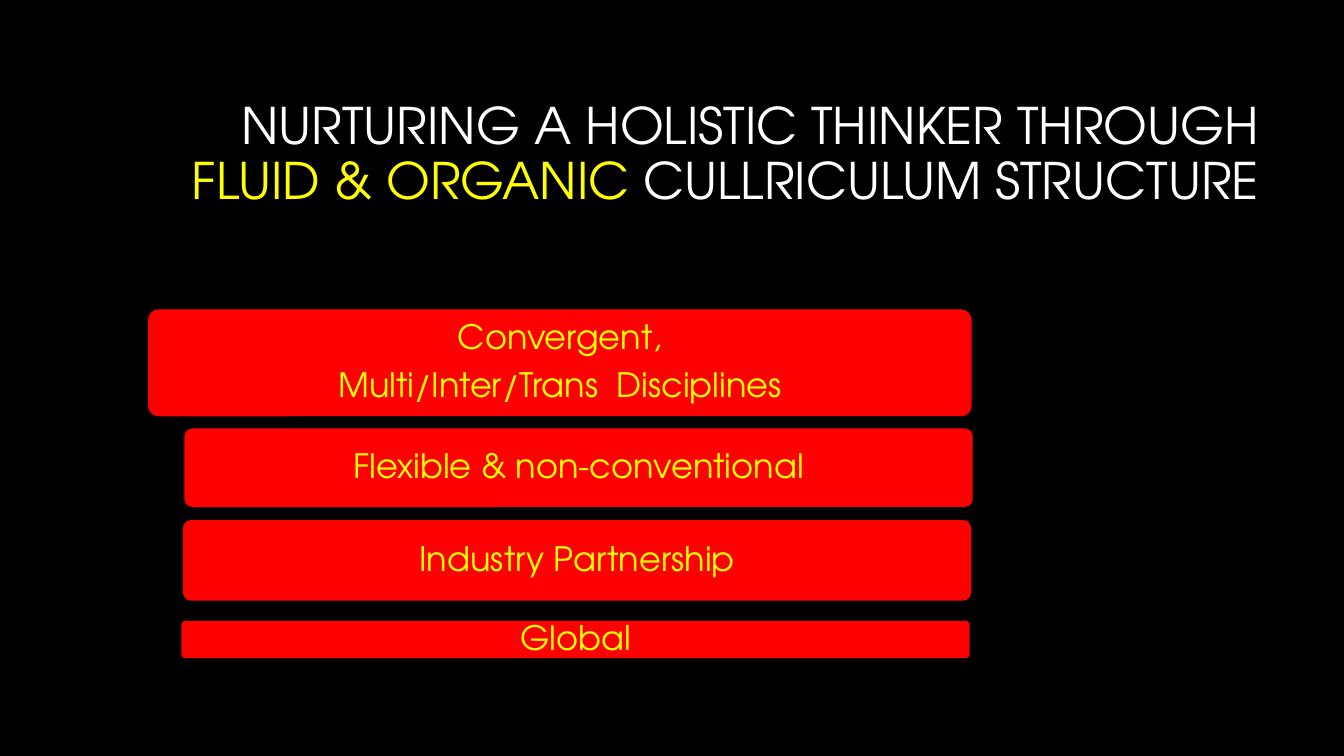
from dataclasses import dataclass

from pptx import Presentation
from pptx.dml.color import RGBColor
from pptx.enum.shapes import MSO_SHAPE
from pptx.enum.text import MSO_ANCHOR, PP_ALIGN
from pptx.slide import Slide
from pptx.text.text import TextFrame
from pptx.util import Pt

BLACK = RGBColor(0, 0, 0)
WHITE = RGBColor(255, 255, 255)
YELLOW = RGBColor(255, 255, 0)
RED = RGBColor(255, 0, 0)
FONT = "TeX Gyre Adventor"

Run = tuple[str, RGBColor]


@dataclass
class Card:
    left: float
    top: float
    width: float
    height: float
    lines: list[str]


CARDS = [
    Card(105.84, 221.04, 588.24, 76.32,
         ["Convergent,", "Multi/Inter/Trans  Disciplines"]),
    Card(131.76, 306, 563.04, 56.16, ["Flexible & non-conventional"]),
    Card(130.68, 371.52, 563.04, 57.6, ["Industry Partnership"]),
    Card(129.6, 443.52, 563.04, 26.64, ["Global"]),
]


def write(frame: TextFrame, lines: list[list[Run]], *, size: float,
          align: PP_ALIGN, after: float = 0) -> None:
    frame.word_wrap = True
    frame.vertical_anchor = MSO_ANCHOR.MIDDLE
    for i, runs in enumerate(lines):
        para = frame.paragraphs[0] if i == 0 else frame.add_paragraph()
        para.alignment = align
        para.line_spacing = 0.9
        para.space_after = Pt(after)
        for text, color in runs:
            run = para.add_run()
            run.text = text
            run.font.name = FONT
            run.font.size = Pt(size)
            run.font.color.rgb = color


def draw(slide: Slide, card: Card) -> None:
    shape = slide.shapes.add_shape(
        MSO_SHAPE.ROUNDED_RECTANGLE, Pt(card.left), Pt(card.top),
        Pt(card.width), Pt(card.height))
    shape.adjustments[0] = 0.1
    shape.shadow.inherit = False
    shape.fill.solid()
    shape.fill.fore_color.rgb = RED
    shape.line.fill.background()
    frame = shape.text_frame
    frame.margin_left = frame.margin_right = Pt(3)
    frame.margin_top = frame.margin_bottom = Pt(2)
    write(frame, [[(line, YELLOW)] for line in card.lines],
          size=24, align=PP_ALIGN.CENTER, after=8.4)


def main() -> None:
    deck = Presentation()
    deck.slide_width, deck.slide_height = Pt(960), Pt(540)
    slide = deck.slides.add_slide(deck.slide_layouts[6])
    slide.background.fill.solid()
    slide.background.fill.fore_color.rgb = BLACK

    # Title
    title = slide.shapes.add_textbox(Pt(115.2), Pt(60.48), Pt(791.28), Pt(101.52))
    write(title.text_frame, [[
        ("NURTURING A HOLISTIC THINKER THROUGH ", WHITE),
        ("FLUID & ORGANIC ", YELLOW),
        ("CULLRICULUM STRUCTURE", WHITE),
    ]], size=36, align=PP_ALIGN.RIGHT)

    # Curriculum cards
    for card in CARDS:
        draw(slide, card)

    deck.save("out.pptx")


if __name__ == "__main__":
    main()
